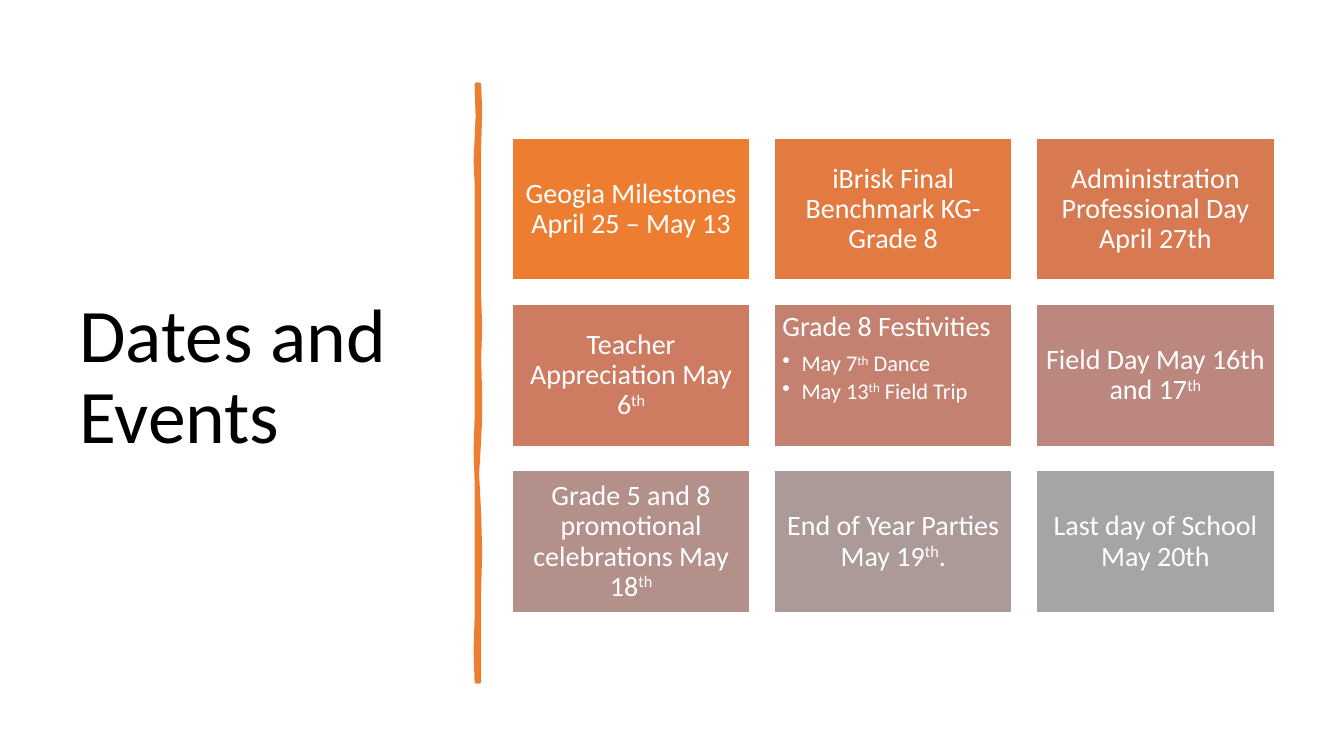
from dataclasses import dataclass

from lxml import etree
from pptx import Presentation
from pptx import util as u
from pptx.dml.color import RGBColor
from pptx.enum import shapes, text
from pptx.oxml import ns

SCALE = 9144
FONT = "Calibri"
ORANGE = "ED7D31"
WHITE = "FFFFFF"
COLUMNS = 3
GRID_LEFT, GRID_TOP = 508, 137
COLUMN_PITCH, ROW_PITCH = 260, 165
CARD_WIDTH, CARD_HEIGHT = 236, 141
CARD_INSET = 8
BULLET_INDENT = 19
BRUSH_RIGHT = [
    (475, 84), (476, 110), (475, 146), (475, 226), (475, 294), (476, 325),
    (475, 356), (476, 393), (476, 415), (475, 436), (473, 470), (475, 510),
    (476, 548), (475, 584), (475, 676),
]
BRUSH_LEFT = [
    (473, 676), (472, 645), (473, 613), (473, 557), (473, 477), (472, 446),
    (473, 415), (473, 335), (473, 250), (473, 181), (472, 160), (474, 115),
    (473, 84),
]


@dataclass
class Card:
    heading: str
    color: str
    bullets: tuple[str, ...] = ()


CARDS = [
    Card("Geogia Milestones April 25 – May 13", ORANGE),
    Card("iBrisk Final Benchmark KG- Grade 8", "E27A42"),
    Card("Administration Professional Day April 27th", "D87A51"),
    Card("Teacher Appreciation May 6^th^", "CE7C61"),
    Card("Grade 8 Festivities", "C48170",
         ("May 7^th^ Dance", "May 13^th^ Field Trip")),
    Card("Field Day May 16th and 17^th^", "BC877E"),
    Card("Grade 5 and 8 promotional celebrations May 18^th^", "B4908B"),
    Card("End of Year Parties May 19^th^.", "AC9A99"),
    Card("Last day of School May 20th", "A5A5A5"),
]


def px(length: int) -> u.Emu:
    return u.Emu(length * SCALE)


def rgb(color: str) -> RGBColor:
    return RGBColor.from_string(color)


def paint(shape, fill: str, line: str, width: float) -> None:
    shape.shadow.inherit = False
    shape.fill.solid()
    shape.fill.fore_color.rgb = rgb(fill)
    shape.line.color.rgb = rgb(line)
    shape.line.width = u.Pt(width)


def write(paragraph, content: str, size: int, color: str) -> None:
    for index, part in enumerate(content.split("^")):
        if part:
            run = paragraph.add_run()
            run.text = part
            if index % 2:
                run._r.get_or_add_rPr().set("baseline", "30000")
    paragraph.line_spacing = 0.9
    paragraph.font.name = FONT
    paragraph.font.size = u.Pt(size)
    paragraph.font.color.rgb = rgb(color)


def add_bullet(paragraph) -> None:
    paragraph.level = 1
    properties = paragraph._p.get_or_add_pPr()
    properties.set("marL", str(px(BULLET_INDENT)))
    properties.set("indent", str(px(-BULLET_INDENT)))
    etree.SubElement(properties, ns.qn("a:buChar")).set("char", "•")


def add_title(slide) -> None:
    title = slide.shapes.add_textbox(px(69), px(70), px(374), px(611))
    frame = title.text_frame
    frame.word_wrap = True
    frame.vertical_anchor = text.MSO_ANCHOR.MIDDLE
    write(frame.paragraphs[0], "Dates and Events", 54, "000000")


def add_brush_stroke(slide) -> None:
    start, *others = BRUSH_RIGHT + BRUSH_LEFT
    builder = slide.shapes.build_freeform(*start, scale=SCALE)
    builder.add_line_segments(others, close=True)
    brush = builder.convert_to_shape()
    paint(brush, ORANGE, ORANGE, 3.25)
    etree.SubElement(brush.line._get_or_add_ln(), ns.qn("a:round"))


def add_card(slide, card: Card, left: int, top: int) -> None:
    shape = slide.shapes.add_shape(
        shapes.MSO_SHAPE.RECTANGLE,
        px(left), px(top), px(CARD_WIDTH), px(CARD_HEIGHT))
    paint(shape, card.color, WHITE, 1)
    frame = shape.text_frame
    frame.word_wrap = True
    frame.margin_left = frame.margin_right = px(CARD_INSET)
    frame.margin_top = frame.margin_bottom = px(CARD_INSET)
    frame.vertical_anchor = (
        text.MSO_ANCHOR.TOP if card.bullets else text.MSO_ANCHOR.MIDDLE)
    heading = frame.paragraphs[0]
    heading.alignment = (
        text.PP_ALIGN.LEFT if card.bullets else text.PP_ALIGN.CENTER)
    heading.space_after = u.Pt(7)
    write(heading, card.heading, 20, WHITE)
    for bullet in card.bullets:
        paragraph = frame.add_paragraph()
        paragraph.alignment = text.PP_ALIGN.LEFT
        paragraph.space_after = u.Pt(2.4)
        add_bullet(paragraph)
        write(paragraph, bullet, 16, WHITE)


def main() -> None:
    presentation = Presentation()
    presentation.slide_width = px(1333)
    presentation.slide_height = px(750)
    slide = presentation.slides.add_slide(presentation.slide_layouts[6])
    add_title(slide)
    add_brush_stroke(slide)
    for index, card in enumerate(CARDS):
        row, column = divmod(index, COLUMNS)
        add_card(slide, card, GRID_LEFT + column * COLUMN_PITCH,
                 GRID_TOP + row * ROW_PITCH)
    presentation.save("out.pptx")


if __name__ == "__main__":
    main()
